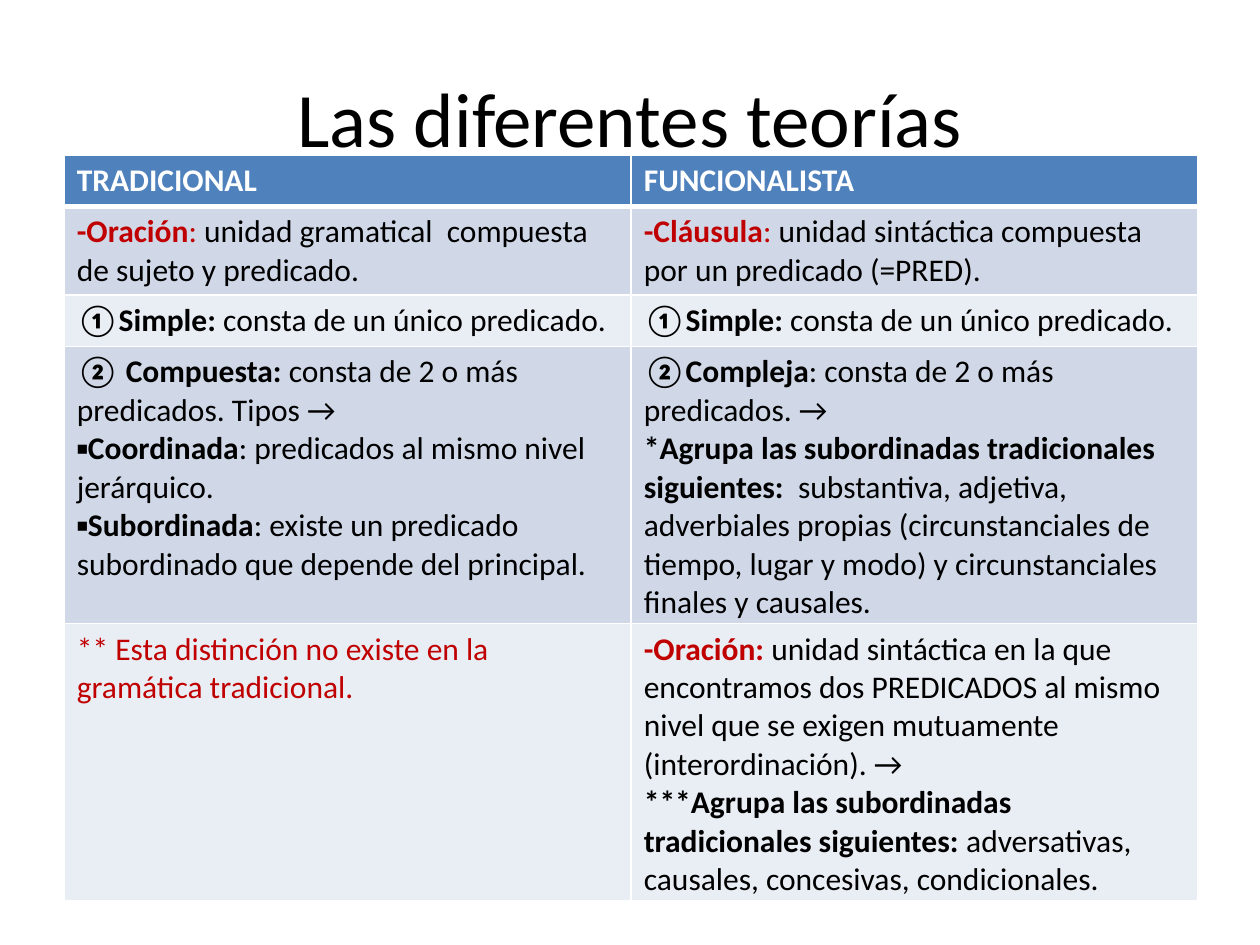
from lxml.etree import SubElement
from pptx import Presentation
from pptx.dml.color import RGBColor
from pptx.enum.text import MSO_ANCHOR, PP_ALIGN
from pptx.oxml.ns import qn
from pptx.util import Inches, Pt

COLORS = {
    "header": "4F81BD", "dark_band": "D0D8E8", "light_band": "E9EDF4",
    "white": "FFFFFF", "black": "000000", "red": "C00000",
}
FONT = "Calibri"
STYLES = {
    "header": ("white", True),
    "plain": ("black", False),
    "bold": ("black", True),
    "red": ("red", False),
    "red bold": ("red", True),
}
TITLE = "Las diferentes teorías"
SIMPLE = [[("①Simple: ", "bold"), ("consta de un único predicado.", "plain")]]
ROWS = [
    ([[("TRADICIONAL", "header")]], [[("FUNCIONALISTA", "header")]]),
    (
        [[("-Oración", "red bold"), (":", "red"),
          (" unidad gramatical  compuesta de sujeto y predicado.", "plain")]],
        [[("-Cláusula", "red bold"), (": ", "red"),
          ("unidad sintáctica compuesta por un predicado (=PRED).", "plain")]],
    ),
    (SIMPLE, SIMPLE),
    (
        [[("② Compuesta: ", "bold"), ("consta de 2 o más predicados. Tipos →", "plain")],
         [("▪Coordinada", "bold"), (": predicados al mismo nivel jerárquico.", "plain")],
         [("▪Subordinada", "bold"),
          (": existe un predicado subordinado que depende del principal.", "plain")]],
        [[("②Compleja", "bold"), (": consta de 2 o más predicados. →", "plain")],
         [("*Agrupa las subordinadas tradicionales siguientes:  ", "bold"),
          ("substantiva, adjetiva, adverbiales propias (circunstanciales de tiempo, "
           "lugar y modo) y circunstanciales finales y causales.", "plain")]],
    ),
    (
        [[("** Esta distinción no existe en la gramática tradicional.", "red")]],
        [[("-Oración: ", "red bold"),
          ("unidad sintáctica en la que encontramos dos PREDICADOS al mismo nivel "
           "que se exigen mutuamente (interordinación). →", "plain")],
         [("***Agrupa las subordinadas tradicionales siguientes: ", "bold"),
          ("adversativas, causales, concesivas, condicionales.", "plain")]],
    ),
]
ROW_HEIGHT = 0.41
COLUMN_WIDTH = 4.5


def format_run(run, size, style):
    color, bold = STYLES[style]
    run.font.name = FONT
    run.font.size = Pt(size)
    run.font.bold = bold
    run.font.color.rgb = RGBColor.from_string(COLORS[color])


def add_title(slide):
    shape = slide.shapes.add_textbox(Inches(0.5), Inches(0.3), Inches(9), Inches(1.25))
    text_frame = shape.text_frame
    text_frame.word_wrap = True
    text_frame.vertical_anchor = MSO_ANCHOR.MIDDLE
    text_frame.text = TITLE
    paragraph = text_frame.paragraphs[0]
    paragraph.alignment = PP_ALIGN.CENTER
    format_run(paragraph.runs[0], 44, "plain")


def set_borders(cell, row_index):
    properties = cell._tc.get_or_add_tcPr()
    widths = {"lnL": 1, "lnR": 1,
              "lnT": 3 if row_index == 1 else 1,
              "lnB": 3 if row_index == 0 else 1}
    for side, width in widths.items():
        line = SubElement(properties, qn(f"a:{side}"), w=str(Pt(width)))
        fill = SubElement(line, qn("a:solidFill"))
        SubElement(fill, qn("a:srgbClr"), val=COLORS["white"])


def fill_cell(cell, row_index, content):
    set_borders(cell, row_index)
    band = "header" if row_index == 0 else "dark_band" if row_index % 2 else "light_band"
    cell.fill.solid()
    cell.fill.fore_color.rgb = RGBColor.from_string(COLORS[band])
    text_frame = cell.text_frame
    for index, pieces in enumerate(content):
        paragraph = text_frame.add_paragraph() if index else text_frame.paragraphs[0]
        for text, style in pieces:
            run = paragraph.add_run()
            run.text = text
            format_run(run, 18, style)


def add_theories_table(slide):
    columns = len(ROWS[0])
    table = slide.shapes.add_table(
        len(ROWS), columns, Inches(0.51), Inches(1.23),
        Inches(columns * COLUMN_WIDTH), Inches(len(ROWS) * ROW_HEIGHT),
    ).table
    for row_index, row in enumerate(ROWS):
        table.rows[row_index].height = Inches(ROW_HEIGHT)
        for column_index, content in enumerate(row):
            fill_cell(table.cell(row_index, column_index), row_index, content)


def main():
    presentation = Presentation()
    presentation.slide_width = Inches(10)
    presentation.slide_height = Inches(7.5)
    slide = presentation.slides.add_slide(presentation.slide_layouts[6])
    add_title(slide)
    add_theories_table(slide)
    presentation.save("out.pptx")


if __name__ == "__main__":
    main()
